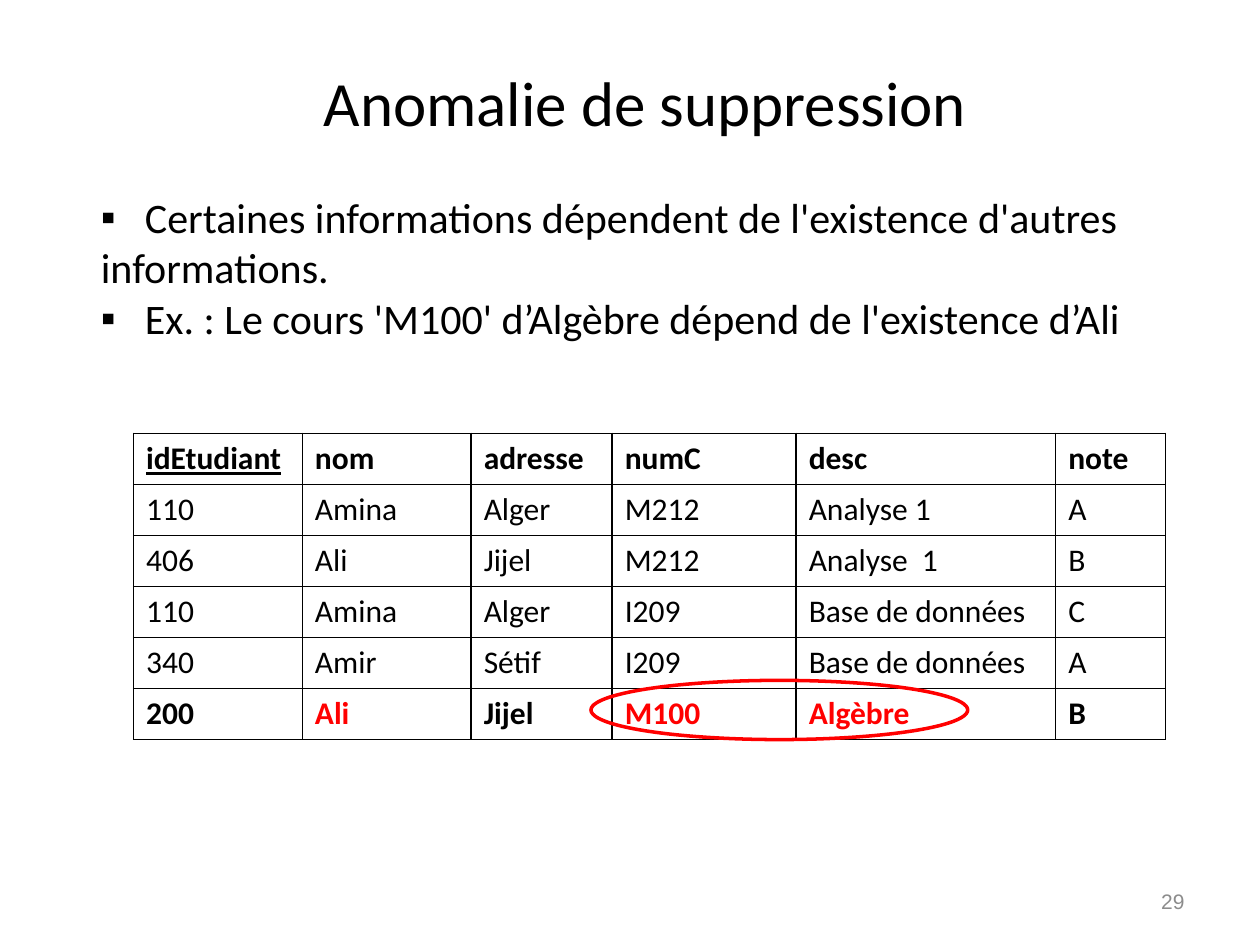
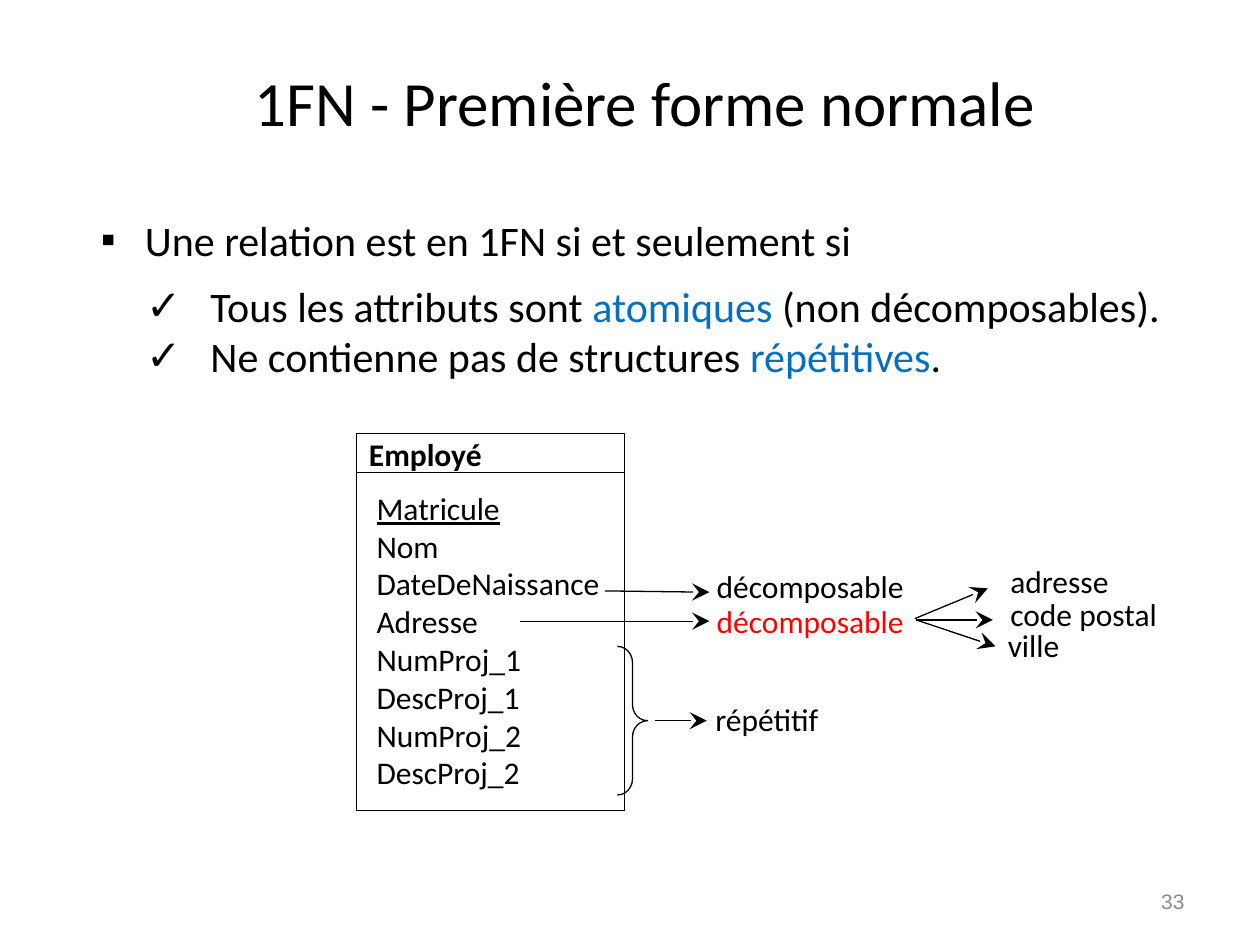
from lxml import etree
from pptx import Presentation
from pptx.dml.color import RGBColor
from pptx.enum.shapes import MSO_CONNECTOR, MSO_SHAPE
from pptx.enum.text import MSO_ANCHOR, MSO_AUTO_SIZE, PP_ALIGN
from pptx.oxml.ns import qn
from pptx.util import Inches, Pt

BLACK = RGBColor(0x00, 0x00, 0x00)
RED = RGBColor(0xFF, 0x00, 0x00)
BLUE = RGBColor(0x00, 0x70, 0xC0)
GREY = RGBColor(0x8C, 0x8C, 0x8C)

LEFT, CENTER, RIGHT = PP_ALIGN.LEFT, PP_ALIGN.CENTER, PP_ALIGN.RIGHT
MIDDLE, TOP = MSO_ANCHOR.MIDDLE, MSO_ANCHOR.TOP
FIXED = MSO_AUTO_SIZE.NONE
STRAIGHT = MSO_CONNECTOR.STRAIGHT
RECT, OVAL, BRACE = MSO_SHAPE.RECTANGLE, MSO_SHAPE.OVAL, MSO_SHAPE.RIGHT_BRACE

TITLE = {"name": "Calibri", "size": Pt(36)}
LIST = {"name": "Calibri", "size": Pt(24)}
LABEL = {"name": "Calibri", "size": Pt(18)}
FOOT = {"name": "Arial", "size": Pt(12)}
BOLD = {**LABEL, "bold": True}
KEY = {**LABEL, "underline": True}

COLS = [1.34, 1.34, 1.12, 1.46, 2.06, 0.87]
ROWS = [
    ["idEtudiant", "nom", "adresse", "numC", "desc", "note"],
    ["110", "Amina", "Alger", "M212", "Analyse 1", "A"],
    ["406", "Ali", "Jijel", "M212", "Analyse  1", "B"],
    ["110", "Amina", "Alger", "I209", "Base de données", "C"],
    ["340", "Amir", "Sétif", "I209", "Base de données", "A"],
    ["200", "Ali", "Jijel", "M100", "Algèbre", "B"],
]
LOST = {"Ali", "M100", "Algèbre"}

FIELDS = ["Matricule", "Nom", "DateDeNaissance", "Adresse",
          "NumProj_1", "DescProj_1", "NumProj_2", "DescProj_2"]

# Text, left, top, width, colour
NOTES = [
    ("décomposable", 5.59, 4.45, 1.7, BLACK),
    ("décomposable", 5.59, 4.73, 1.7, RED),
    ("répétitif", 5.58, 5.51, 1.03, BLACK),
    ("adresse", 7.92, 4.41, 0.99, BLACK),
    ("code postal", 7.92, 4.67, 1.41, BLACK),
    ("ville", 7.9, 4.92, 0.62, BLACK),
]

# Start x, start y, end x, end y
ARROWS = [
    (4.8, 4.69, 5.63, 4.7),
    (4.13, 4.93, 5.63, 4.93),
    (5.2, 5.72, 5.61, 5.72),
    (7.26, 4.91, 7.84, 4.67),
    (7.27, 4.92, 7.88, 4.92),
    (7.27, 4.92, 7.9, 5.13),
]


def put(shape, *box):
    """Place a shape by left, top, width and height."""
    for name, val in zip(("left", "top", "width", "height"), box):
        setattr(shape, name, Inches(val))


def write(para, text, look, color=BLACK):
    run = para.add_run()
    run.text = text
    for name, val in look.items():
        setattr(run.font, name, val)
    run.font.color.rgb = color


def add_sub(node, tag, **attrs):
    return etree.SubElement(node, qn(tag), attrs)


# Shared slide frame
def add_page(deck, title, number):
    page = deck.slides.add_slide(deck.slide_layouts[1])
    head = page.shapes.title
    put(head, 0.59, 0.29, 9.06, 1.02)
    head.text_frame.auto_size = FIXED
    head.text_frame.vertical_anchor = MIDDLE
    para = head.text_frame.paragraphs[0]
    para.alignment = CENTER
    write(para, title, TITLE)
    add_text(page, [number], (7.17, 6.95, 2.33, 0.4), FOOT, GREY,
             align=RIGHT, anchor=MIDDLE)
    return page


def add_text(page, lines, box, look, color=BLACK, wrap=True,
             align=LEFT, anchor=TOP, first=None):
    shape = page.shapes.add_textbox(*map(Inches, box))
    frame = shape.text_frame
    frame.word_wrap = wrap
    frame.vertical_anchor = anchor
    for i, line in enumerate(lines):
        para = frame.add_paragraph() if i else frame.paragraphs[0]
        para.alignment = align
        write(para, line, first if first and i == 0 else look, color)


# Bulleted list: each item is (mark, margin, hang, gap, parts)
def add_list(page, box, items):
    body = page.placeholders[1]
    put(body, *box)
    frame = body.text_frame
    frame.auto_size = FIXED
    frame.vertical_anchor = TOP
    for i, (mark, margin, hang, gap, parts) in enumerate(items):
        para = frame.add_paragraph() if i else frame.paragraphs[0]
        para.space_before = Pt(gap)
        props = para._p.get_or_add_pPr()
        props.set("marL", str(Inches(margin)))
        props.set("indent", str(-Inches(hang)))
        add_sub(props, "a:buFont", typeface="Arial")
        add_sub(props, "a:buChar", char=mark)
        if not hang:
            tabs = add_sub(props, "a:tabLst")
            add_sub(tabs, "a:tab", pos=str(Inches(0.35)), algn="l")
        for text, color in parts:
            write(para, text, LIST, color)


def add_edges(cell):
    props = cell._tc.get_or_add_tcPr()
    for i, side in enumerate(("a:lnL", "a:lnR", "a:lnT", "a:lnB")):
        edge = etree.Element(qn(side), w=str(Pt(1)))
        fill = add_sub(edge, "a:solidFill")
        add_sub(fill, "a:srgbClr", val=str(BLACK))
        props.insert(i, edge)


def add_grid(page, left, top, height):
    frame = page.shapes.add_table(
        len(ROWS), len(COLS), Inches(left), Inches(top),
        Inches(sum(COLS)), Inches(height))
    grid = frame.table
    grid.first_row = grid.horz_banding = False
    for col, width in zip(grid.columns, COLS):
        col.width = Inches(width)
    last = len(ROWS) - 1
    for r, row in enumerate(ROWS):
        for c, text in enumerate(row):
            cell = grid.cell(r, c)
            cell.fill.background()
            add_edges(cell)
            look = {**LABEL, "bold": r in (0, last),
                    "underline": r == c == 0}
            color = RED if r == last and text in LOST else BLACK
            write(cell.text_frame.paragraphs[0], text, look, color)


def add_form(page, kind, box, color, width):
    """Draw an unfilled outline."""
    shape = page.shapes.add_shape(kind, *map(Inches, box))
    shape.shadow.inherit = False
    shape.fill.background()
    shape.line.color.rgb = color
    shape.line.width = Pt(width)
    return shape


def add_arrow(page, ends):
    link = page.shapes.add_connector(STRAIGHT, *map(Inches, ends))
    link.line.color.rgb = BLACK
    link.line.width = Pt(0.75)
    add_sub(link.line._get_or_add_ln(), "a:tailEnd",
            type="stealth", w="lg", len="lg")
    add_sub(link._element.spPr, "a:effectLst")


def add_loss(deck):
    page = add_page(deck, "Anomalie de suppression", "29")
    add_list(page, (0.7, 1.47, 9.03, 1.31), [
        ("▪", 0, 0, 0, [("\tCertaines informations dépendent de "
                         "l'existence d'autres informations.", BLACK)]),
        ("▪", 0.35, 0.35, 0, [("Ex. : Le cours 'M100' d’Algèbre dépend "
                               "de l'existence d’Ali", BLACK)]),
    ])
    add_grid(page, 1.06, 3.44, 2.43)
    add_form(page, OVAL, (4.69, 5.4, 2.99, 0.47), RED, 2)


def add_norm(deck):
    page = add_page(deck, "1FN - Première forme normale", "33")
    add_list(page, (0.7, 1.65, 9.21, 1.43), [
        ("▪", 0.35, 0.35, 0,
         [("Une relation est en 1FN si et seulement si", BLACK)]),
        ("✓", 0.87, 0.51, 9,
         [("Tous les attributs sont ", BLACK), ("atomiques ", BLUE),
          ("(non décomposables).", BLACK)]),
        ("✓", 0.87, 0.51, 0,
         [("Ne contienne pas de structures ", BLACK),
          ("répétitives", BLUE), (".", BLACK)]),
    ])
    # Relation box
    add_form(page, RECT, (2.83, 3.44, 2.13, 0.31), BLACK, 0.5)
    add_form(page, RECT, (2.83, 3.75, 2.13, 2.68), BLACK, 0.5)
    add_text(page, ["Employé"], (2.83, 3.4, 1.1, 0.4), BOLD, wrap=False)
    add_text(page, FIELDS, (2.89, 3.83, 2.16, 2.52), LABEL, first=KEY)
    # Remarks and arrows
    brace = add_form(page, BRACE, (4.9, 5.13, 0.24, 1.18), BLACK, 0.75)
    brace.adjustments[0] = 0.53
    for text, left, top, width, color in NOTES:
        add_text(page, [text], (left, top, width, 0.4), LABEL, color,
                 wrap=False)
    for ends in ARROWS:
        add_arrow(page, ends)


def main():
    deck = Presentation()
    deck.slide_width, deck.slide_height = Inches(10), Inches(7.5)
    add_loss(deck)
    add_norm(deck)
    deck.save("out.pptx")


if __name__ == "__main__":
    main()
